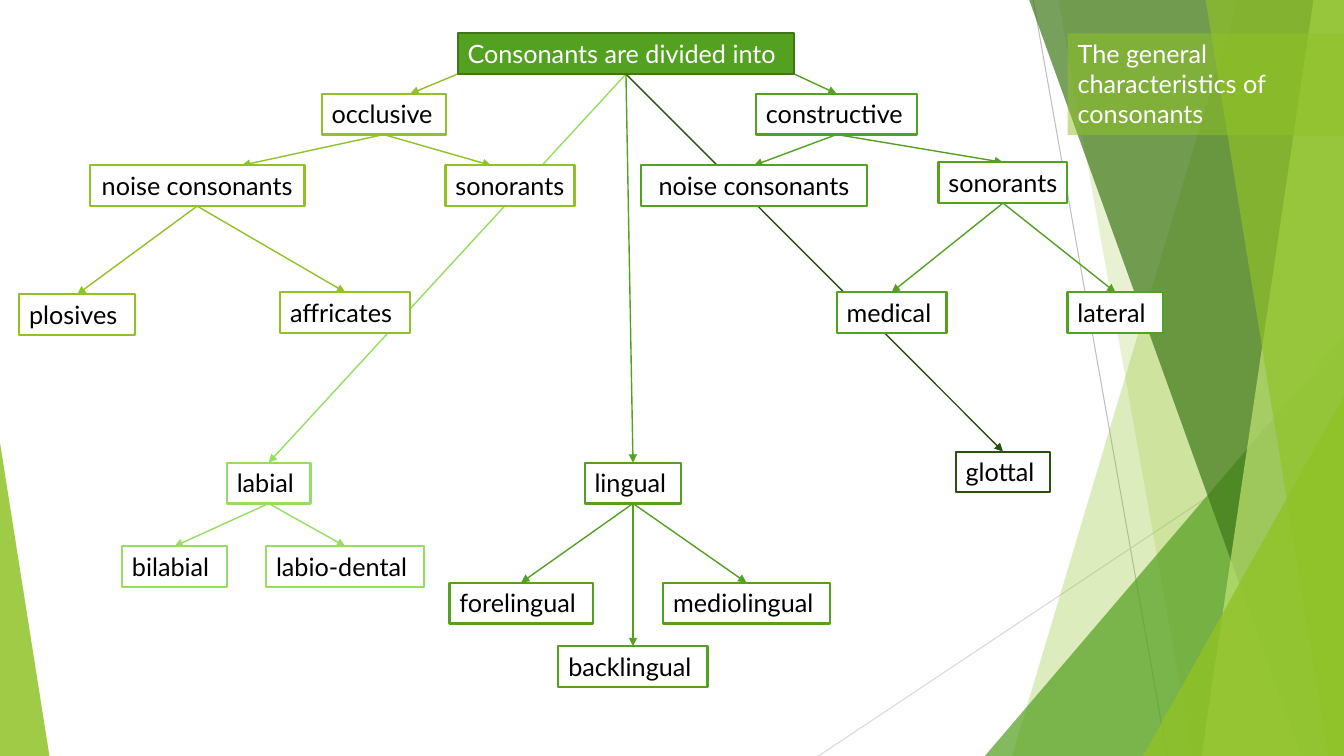
"""Build a slide with a tree that classifies consonants."""
import pptx
import pptx.dml.color
import pptx.enum.shapes
import pptx.enum.text
import pptx.oxml
import pptx.oxml.ns
import pptx.util

THEME = {
    "lime": "90C226", "green": "54A021", "light": "94DE61", "dark": "2A5010",
    "forest": "3F7819", "pale": "C0E474", "root_line": "3E7618",
    "white": "FFFFFF", "black": "000000", "grey": "BFBFBF", "silver": "D9D9D9",
    "font": "Lato", "size": 18, "box_line": 1.5, "arrow": 1, "hairline": 0.75,
}

TITLE = "The general characteristics of consonants"
TITLE_AREA = (79.43, 4.4, 20.57, 13.47)
BOX_HEIGHT = 5.4

# Percent of slide width and height: key, text, left, width, top, colour, parent
NODES = [
    ("root", "Consonants are divided into", 34.05, 25.05, 4.4, "green", None),
    ("occlusive", "occlusive", 23.93, 9.23, 12.4, "lime", "root"),
    ("constructive", "constructive", 56.25, 12, 12.4, "green", "root"),
    ("occlusive noise", "noise consonants", 6.68, 15.98, 21.87, "lime", "occlusive"),
    ("occlusive sonorants", "sonorants", 33.15, 9.6, 21.87, "lime", "occlusive"),
    ("plosives", "plosives", 1.43, 8.63, 38.93, "lime", "occlusive noise"),
    ("affricates", "affricates", 20.85, 9.68, 38.67, "lime", "occlusive noise"),
    ("constructive noise", "noise consonants", 47.7, 16.8, 21.87, "green", "constructive"),
    ("constructive sonorants", "sonorants", 69.83, 9.6, 21.47, "green", "constructive"),
    ("medical", "medical", 62.25, 8.18, 38.67, "green", "constructive sonorants"),
    ("lateral", "lateral", 79.43, 7.13, 38.67, "green", "constructive sonorants"),
    ("labial", "labial", 16.88, 6.23, 61.2, "light", "root"),
    ("lingual", "lingual", 43.5, 7.2, 61.2, "green", "root"),
    ("glottal", "glottal", 71.1, 7.05, 59.73, "dark", "root"),
    ("bilabial", "bilabial", 9.08, 7.8, 72.27, "light", "labial"),
    ("labio-dental", "labio-dental", 19.8, 11.78, 72.27, "light", "labial"),
    ("forelingual", "forelingual", 33.45, 10.65, 77.07, "green", "lingual"),
    ("mediolingual", "mediolingual", 49.35, 12.38, 77.07, "green", "lingual"),
    ("backlingual", "backlingual", 41.55, 11.1, 85.47, "green", "lingual"),
]
CENTERED = {"occlusive noise", "constructive noise"}
FREE_STARTS = {"occlusive": 34.05, "constructive": 59.1}
FREE_ENDS = {"occlusive": 30.53, "occlusive noise": 18, "occlusive sonorants": 36.53}

HAIRLINES = [((76.88, 0), (86.85, 100), "grey"), ((100, 53.73), (60.9, 100), "silver")]
BAND, TRIANGLE = "band", "triangle"
DECORATION = [
    (BAND, (92.1, 75.3), "lime", 30),
    (BAND, (78.75, 88.73), "lime", 20),
    (TRIANGLE, (73.28, 44.4, 26.72, 1), "green", 72),
    (BAND, (76.58, 96.83), "forest", 70),
    (BAND, (97.73, 89.4), "pale", 70),
    (BAND, (89.7, 98.85), "lime", 65),
    (TRIANGLE, (85.05, 52.4, 14.95, 1), "lime", 80),
    (TRIANGLE, (0, 58.53, 3.68, 0), "lime", 85),
]

presentation = pptx.Presentation()
presentation.slide_width = pptx.util.Inches(13.33)
presentation.slide_height = pptx.util.Inches(7.5)
slide = presentation.slides.add_slide(presentation.slide_layouts[5])
shapes = slide.shapes


def across(percent):
    return round(presentation.slide_width * percent / 100)


def down(percent):
    return round(presentation.slide_height * percent / 100)


def area(left, top, width, height):
    return across(left), down(top), across(width), down(height)


def color(name):
    return pptx.dml.color.RGBColor.from_string(THEME[name])


def paint(shape, fill, opacity=100, line=None):
    shape.fill.solid()
    shape.fill.fore_color.rgb = color(fill)
    if opacity < 100:
        choice = shape.fill._xPr.find(pptx.oxml.ns.qn("a:solidFill"))[0]
        alpha = pptx.oxml.parse_xml(f'<a:alpha {pptx.oxml.ns.nsdecls("a")} val="{opacity * 1000}"/>')
        choice.append(alpha)
    if line:
        shape.line.color.rgb = color(line)
        shape.line.width = pptx.util.Pt(THEME["box_line"])
    else:
        shape.line.fill.background()


def write(shape, text, ink="black", centered=False):
    frame = shape.text_frame
    frame.text = text
    frame.word_wrap = True
    frame.auto_size = pptx.enum.text.MSO_AUTO_SIZE.NONE
    frame.vertical_anchor = pptx.enum.text.MSO_ANCHOR.TOP
    if not centered:
        frame.margin_right = 0
    paragraph = frame.paragraphs[0]
    alignment = pptx.enum.text.PP_ALIGN
    paragraph.alignment = alignment.CENTER if centered else alignment.LEFT
    font = paragraph.runs[0].font
    font.name = THEME["font"]
    font.size = pptx.util.Pt(THEME["size"])
    font.color.rgb = color(ink)


def add_line(start, end, ink, width, arrow=False):
    straight = pptx.enum.shapes.MSO_CONNECTOR.STRAIGHT
    connector = shapes.add_connector(
        straight, across(start[0]), down(start[1]), across(end[0]), down(end[1]))
    connector.line.color.rgb = color(ink)
    connector.line.width = pptx.util.Pt(THEME[width])
    namespace = pptx.oxml.ns.nsdecls("a")
    if arrow:
        connector.line._get_or_add_ln().append(
            pptx.oxml.parse_xml(f'<a:tailEnd {namespace} type="triangle"/>'))
    connector._element.spPr.append(pptx.oxml.parse_xml(f"<a:effectLst {namespace}/>"))
    return connector


def add_decoration(kind, place, fill, opacity):
    if kind == BAND:
        top_x, bottom_x = place
        builder = shapes.build_freeform(across(top_x), 0)
        corners = [(100, 0), (100, 100), (bottom_x, 100)]
        builder.add_line_segments([(across(x), down(y)) for x, y in corners])
        shape = builder.convert_to_shape()
    else:
        left, top, width, peak = place
        shape = shapes.add_shape(
            pptx.enum.shapes.MSO_SHAPE.ISOSCELES_TRIANGLE, *area(left, top, width, 100 - top))
        shape.adjustments[0] = peak
    shape.shadow.inherit = False
    paint(shape, fill, opacity)


def add_box(key, text, left, width, top, ink):
    box = shapes.add_shape(
        pptx.enum.shapes.MSO_SHAPE.RECTANGLE, *area(left, top, width, BOX_HEIGHT))
    box.shadow.inherit = False
    is_root = key == "root"
    paint(box, ink if is_root else "white", line="root_line" if is_root else ink)
    write(box, text, ink="white" if is_root else "black", centered=key in CENTERED)
    return box


def add_branch(key, parent, ink, boxes, places):
    parent_left, parent_width, parent_top = places[parent]
    left, width, top = places[key]
    start = FREE_STARTS.get(key, parent_left + parent_width / 2), parent_top + BOX_HEIGHT
    end = FREE_ENDS.get(key, left + width / 2), top
    connector = add_line(start, end, ink, "arrow", arrow=True)
    if key not in FREE_STARTS:
        connector.begin_connect(boxes[parent], 2)
    if key not in FREE_ENDS:
        connector.end_connect(boxes[key], 0)


def main():
    for hairline in HAIRLINES:
        add_line(*hairline, "hairline")
    for item in DECORATION:
        add_decoration(*item)

    title = shapes.title
    title.left, title.top, title.width, title.height = area(*TITLE_AREA)
    paint(title, "lime", 50)
    write(title, TITLE, ink="white")
    shapes._spTree.append(title._element)

    boxes = {node[0]: add_box(*node[:6]) for node in NODES}
    places = {node[0]: node[2:5] for node in NODES}
    for key, *_, ink, parent in NODES:
        if parent:
            add_branch(key, parent, ink, boxes, places)
    for box in boxes.values():
        shapes._spTree.append(box._element)

    presentation.save("out.pptx")


if __name__ == "__main__":
    main()
